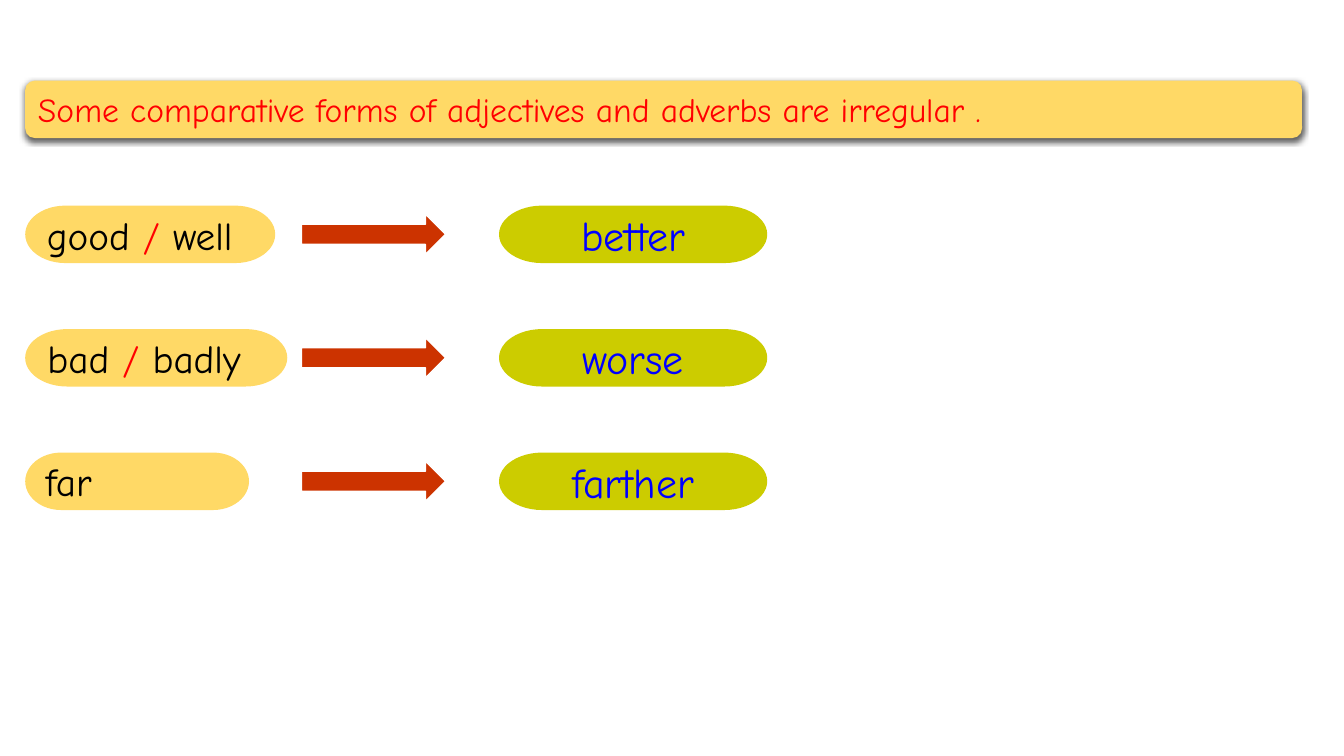
from lxml import etree
from pptx import Presentation
from pptx.dml.color import RGBColor
from pptx.enum import shapes, text
from pptx.oxml import ns
from pptx.util import Inches, Pt

COLOURS = {
    "yellow": "FFD966",
    "olive": "CCCC00",
    "rust": "CC3300",
    "red": "FF0000",
    "blue": "0000FF",
    "black": "000000",
    "white": "FFFFFF",
}
FONT = "Comic Neue"
SLIDE_WIDTH, SLIDE_HEIGHT = 13.33, 7.5

LEFT = 0.25
ARROW_LEFT, ARROW_WIDTH, ARROW_HEIGHT = 2.99, 1.43, 0.4
ANSWER_LEFT, ANSWER_WIDTH = 4.95, 2.66
BAR_TOP, BAR_HEIGHT = 0.8, 0.57
FIRST_ROW, ROW_STEP = 2.04, 1.225

# base form, width of its pill, comparative form
COMPARATIVES = [
    ("good / well", 2.48, "better"),
    ("bad / badly", 2.6, "worse"),
    ("far", 2.22, "farther"),
]


def colour(name):
    return RGBColor.from_string(COLOURS[name])


def add_box(slide, kind, left, top, width, height, fill):
    shape = slide.shapes.add_shape(
        kind, Inches(left), Inches(top), Inches(width), Inches(height))
    shape.shadow.inherit = False
    shape.fill.solid()
    shape.fill.fore_color.rgb = colour(fill)
    shape.line.fill.background()
    return shape


def write(shape, runs, size, align=text.PP_ALIGN.LEFT):
    """Fill the shape with one paragraph of (words, colour name) runs."""
    frame = shape.text_frame
    frame.word_wrap = True
    frame.vertical_anchor = text.MSO_ANCHOR.MIDDLE
    paragraph = frame.paragraphs[0]
    paragraph.alignment = align
    for words, name in runs:
        run = paragraph.add_run()
        run.text = words
        run.font.name = FONT
        run.font.size = Pt(size)
        run.font.color.rgb = colour(name)


def drop_shadow(shape, blur, distance, opacity):
    """Cast a black shadow straight down; blur and distance in points."""
    effects = shape._element.spPr.find(ns.qn("a:effectLst"))
    shadow = etree.SubElement(
        effects, ns.qn("a:outerShdw"), blurRad=str(Pt(blur)),
        dist=str(Pt(distance)), dir="5400000", algn="ctr", rotWithShape="0")
    black = etree.SubElement(shadow, ns.qn("a:srgbClr"), val=COLOURS["black"])
    etree.SubElement(black, ns.qn("a:alpha"), val=str(opacity * 1000))


def add_rule_bar(slide, words):
    bar = add_box(slide, shapes.MSO_SHAPE.ROUNDED_RECTANGLE, LEFT, BAR_TOP,
                  SLIDE_WIDTH * 0.95, BAR_HEIGHT, "yellow")
    drop_shadow(bar, blur=4.5, distance=1.5, opacity=63)
    write(bar, [(words, "red")], size=24)


def add_pill(slide, left, top, width, fill, runs, **text_format):
    pill = add_box(slide, shapes.MSO_SHAPE.FLOWCHART_TERMINATOR,
                   left, top, width, BAR_HEIGHT, fill)
    write(pill, runs, **text_format)


def add_arrow(slide, row_top):
    top = row_top + (BAR_HEIGHT - ARROW_HEIGHT) / 2
    arrow = add_box(slide, shapes.MSO_SHAPE.RIGHT_ARROW, ARROW_LEFT, top,
                    ARROW_WIDTH, ARROW_HEIGHT, "rust")
    arrow.line.color.rgb = colour("white")
    arrow.line.width = Pt(1)


def base_form_runs(words):
    """Split the words so that a slash becomes a red run."""
    before, slash, after = words.partition("/")
    runs = [(before, "black"), (slash, "red"), (after, "black")]
    return [run for run in runs if run[0]]


def add_comparative(slide, top, base, base_width, answer):
    add_pill(slide, LEFT, top, base_width, "yellow",
             base_form_runs(base), size=28)
    add_arrow(slide, top)
    add_pill(slide, ANSWER_LEFT, top, ANSWER_WIDTH, "olive",
             [(answer, "blue")], size=30, align=text.PP_ALIGN.CENTER)


def main():
    presentation = Presentation()
    presentation.slide_width = Inches(SLIDE_WIDTH)
    presentation.slide_height = Inches(SLIDE_HEIGHT)
    slide = presentation.slides.add_slide(presentation.slide_layouts[6])

    add_rule_bar(
        slide,
        "Some comparative forms of adjectives and adverbs are irregular .")
    for row, comparative in enumerate(COMPARATIVES):
        add_comparative(slide, FIRST_ROW + row * ROW_STEP, *comparative)

    presentation.save("out.pptx")


if __name__ == "__main__":
    main()
